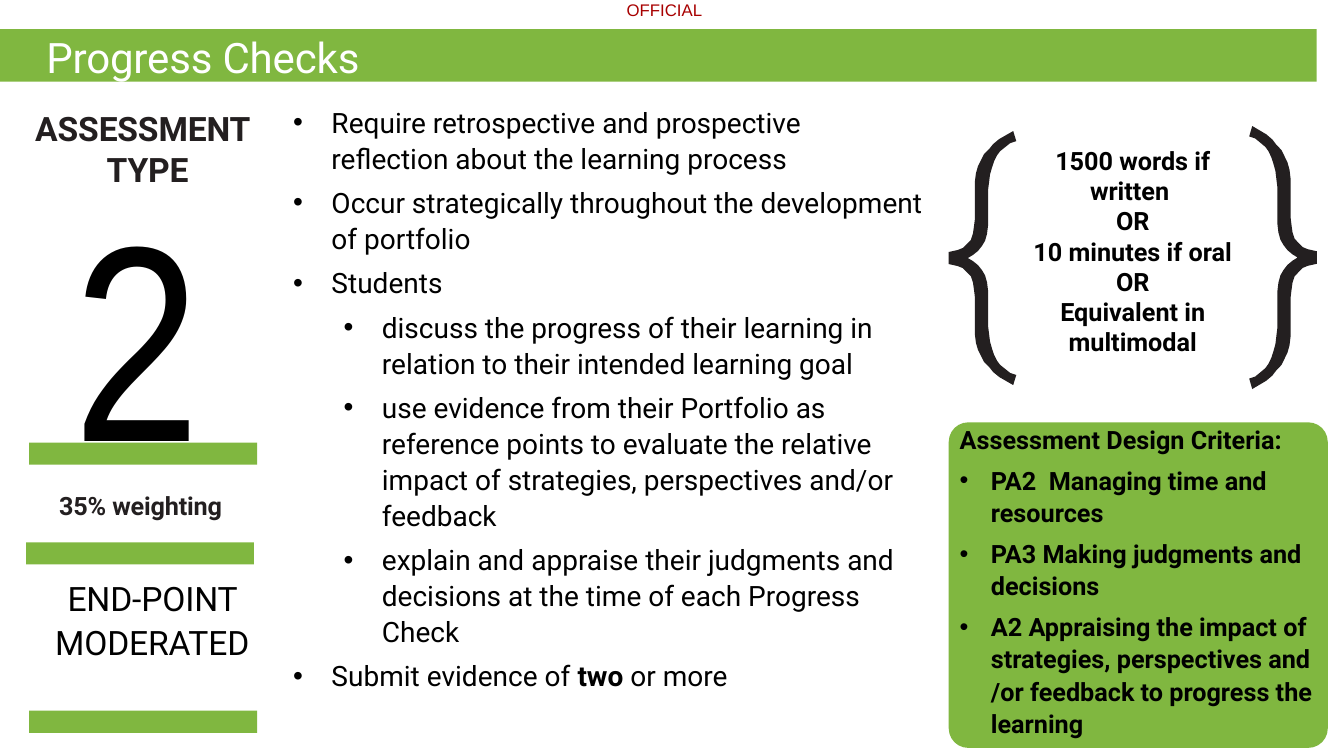
"""Build the Progress Checks assessment slide."""
from lxml.etree import SubElement
from pptx import Presentation
from pptx.dml.color import RGBColor
from pptx.enum.shapes import MSO_SHAPE as SHAPE
from pptx.enum.text import MSO_ANCHOR as ANCHOR, PP_ALIGN as ALIGN
from pptx.oxml.ns import qn
from pptx.util import Pt

PX = 9144
GREEN = RGBColor(0x80, 0xB7, 0x40)
INK = RGBColor(0x23, 0x1F, 0x20)
BLACK = RGBColor(0, 0, 0)
WHITE = RGBColor(0xFF, 0xFF, 0xFF)
RED = RGBColor(0xA8, 0, 0)

TITLE = "Progress Checks"
HEADING = [("ASSESSMENT", ALIGN.LEFT), ("TYPE", ALIGN.CENTER)]
REQUIREMENTS = [
    (0, "Require retrospective and prospective reflection about the learning process"),
    (0, "Occur strategically throughout the development of portfolio"),
    (0, "Students"),
    (1, "discuss the progress of their learning in relation to their intended learning goal"),
    (1, "use evidence from their Portfolio as reference points to evaluate the relative "
        "impact of strategies, perspectives and/or feedback"),
    (1, "explain and appraise their judgments and decisions at the time of each Progress Check"),
    (0, "Submit evidence of *two* or more"),
]
CRITERIA_TITLE = "Assessment Design Criteria:"
CRITERIA = [
    "PA2  Managing time and resources",
    "PA3 Making judgments and decisions",
    "A2 Appraising the impact of strategies, perspectives and /or feedback to "
    "progress the learning",
]
LENGTHS = ["1500 words if written ", "OR", "10 minutes if oral", "OR", "Equivalent in multimodal"]

BARS = [(29, 439), (26, 538), (29, 705)]
BAR_W, BAR_H = 226, 22
BRACES = [(941, 130, 252, False), (1239, 125, 261, True)]
BRACE_W, BRACE_H = 67, 252
OUTER = [(64, 0), (57, 4), (50, 8), (44, 13), (40, 18), (35, 23), (32, 29), (29, 35),
         (27, 42), (26, 50), (26, 58), (26, 87), (25, 95), (24, 102), (22, 108),
         (18, 112), (14, 116), (9, 118), (0, 120)]
INNER = [(19, 126), (24, 123), (29, 119), (33, 114), (36, 109), (38, 102), (39, 94),
         (39, 59), (40, 51), (41, 43), (43, 36), (45, 30), (48, 24), (51, 20),
         (56, 16), (61, 12), (67, 10)]


def paint(sp, color):
    sp.fill.solid()
    sp.fill.fore_color.rgb = color
    sp.line.fill.background()
    sp.shadow.inherit = False
    return sp


def add_block(shapes, kind, *box):
    return paint(shapes.add_shape(kind, *(v * PX for v in box)), GREEN)


def add_text_box(shapes, *box, insets=(10, 5, 10, 5)):
    return set_frame(shapes.add_textbox(*(v * PX for v in box)), insets)


def set_frame(sp, insets):
    tf = sp.text_frame
    tf.word_wrap = True
    tf.vertical_anchor = ANCHOR.TOP
    tf.margin_left, tf.margin_top, tf.margin_right, tf.margin_bottom = (v * PX for v in insets)
    return tf


def add_line(tf, text, size, color=BLACK, font="Roboto", bold=False, align=ALIGN.LEFT,
             before=0, spacing=None, tight=False, margin=0, hang=0, level=0):
    first = tf.paragraphs[0]
    p = tf.add_paragraph() if first.runs else first
    p.alignment, p.level = align, level
    p.space_before = Pt(before)
    if spacing:
        p.line_spacing = spacing
    pPr = p._p.get_or_add_pPr()
    pPr.set("marL", str(margin * PX))
    pPr.set("indent", str(-hang * PX))
    if hang:
        SubElement(pPr, qn("a:buFont")).set("typeface", "Arial")
        SubElement(pPr, qn("a:buChar")).set("char", "•")
    for i, part in enumerate(text.split("*")):
        r = p.add_run()
        r.text = part
        r.font.name, r.font.size = font, Pt(size)
        r.font.bold = bold or i % 2 == 1
        r.font.color.rgb = color
        if tight:
            r._r.get_or_add_rPr().set("spc", "-10")


def add_brace(shapes, left, top, height, flipped):
    def mirror(points):
        return [(x, BRACE_H - y) for x, y in reversed(points)]

    outline = OUTER + mirror(OUTER) + mirror(INNER) + INNER
    points = [((left + (BRACE_W - x if flipped else x)) * PX,
               round((top + y * height / BRACE_H) * PX)) for x, y in outline]
    fb = shapes.build_freeform(*points[0])
    fb.add_line_segments(points[1:], close=True)
    paint(fb.convert_to_shape(), INK)


def main():
    prs = Presentation()
    prs.slide_width, prs.slide_height = 1333 * PX, 750 * PX
    shapes = prs.slides.add_slide(prs.slide_layouts[6]).shapes

    tf = add_text_box(shapes, 619, 0, 80, 20, insets=(0, 0, 0, 0))
    tf.word_wrap = False
    add_line(tf, "OFFICIAL", 12, RED, "Arial", align=ALIGN.CENTER)

    tf = set_frame(add_block(shapes, SHAPE.RECTANGLE, 0, 29, 1306, 52), (0, 2, 0, 0))
    add_line(tf, TITLE, 30, WHITE, before=1.4, tight=True, margin=46)

    tf = add_text_box(shapes, 281, 97, 646, 643)
    for level, text in REQUIREMENTS:
        add_line(tf, text, 20, before=6, spacing=1.07, margin=38 + 50 * level, hang=38, level=level)

    tf = add_text_box(shapes, 22, 157, 228, 345)
    add_line(tf, "2", 199, font="Arial Narrow", align=ALIGN.CENTER)

    tf = add_text_box(shapes, 34, 106, 224, 83, insets=(0, 1, 0, 0))
    for text, align in HEADING:
        add_line(tf, text, 24, INK, bold=True, align=align, before=0.7, tight=True, margin=1)

    for left, top in BARS:
        add_block(shapes, SHAPE.RECTANGLE, left, top, BAR_W, BAR_H)

    tf = add_text_box(shapes, 23, 485, 232, 31, insets=(0, 1, 0, 0))
    add_line(tf, "35% weighting", 18, INK, bold=True, align=ALIGN.CENTER,
             before=0.7, tight=True, margin=1)

    tf = add_text_box(shapes, 23, 566, 256, 94)
    add_line(tf, "END-POINT MODERATED", 24, align=ALIGN.CENTER, before=6, spacing=1.07, tight=True)

    panel = add_block(shapes, SHAPE.ROUNDED_RECTANGLE, 941, 419, 376, 323)
    panel.adjustments[0] = 0.06
    tf = add_text_box(shapes, 942, 414, 373, 369)
    add_line(tf, CRITERIA_TITLE, 18, bold=True, before=6, spacing=1.07)
    for text in CRITERIA:
        add_line(tf, text, 18, bold=True, before=6, spacing=1.07, margin=31, hang=31)

    tf = add_text_box(shapes, 1008, 139, 231, 222)
    for text in LENGTHS:
        add_line(tf, text, 18, bold=True, align=ALIGN.CENTER)
    for brace in BRACES:
        add_brace(shapes, *brace)

    prs.save("out.pptx")


if __name__ == "__main__":
    main()
